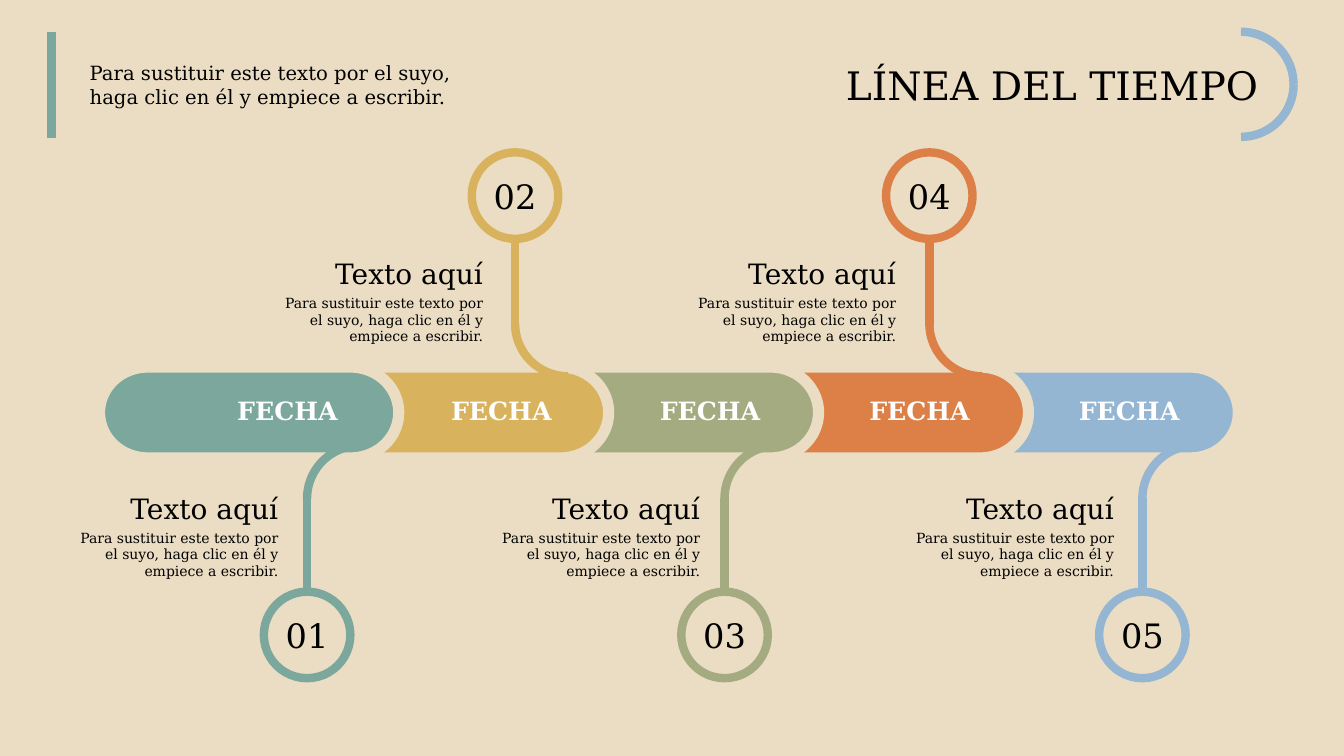
from collections import namedtuple

from lxml import etree
from pptx import Presentation
from pptx.dml.color import RGBColor
from pptx.enum.shapes import MSO_CONNECTOR, MSO_SHAPE
from pptx.enum.text import MSO_AUTO_SIZE, PP_ALIGN
from pptx.oxml.ns import qn
from pptx.util import Cm, Pt

STRAIGHT = MSO_CONNECTOR.STRAIGHT
ARC, OVAL, PILL = MSO_SHAPE.ARC, MSO_SHAPE.OVAL, MSO_SHAPE.FLOWCHART_TERMINATOR
LEFT, CENTER, RIGHT = PP_ALIGN.LEFT, PP_ALIGN.CENTER, PP_ALIGN.RIGHT
GROW = MSO_AUTO_SIZE.SHAPE_TO_FIT_TEXT

SAND = RGBColor(0xEB, 0xDD, 0xC3)
TEAL = RGBColor(0x7B, 0xA7, 0x9D)
GOLD = RGBColor(0xD8, 0xB2, 0x5C)
OLIVE = RGBColor(0xA5, 0xAB, 0x81)
ORANGE = RGBColor(0xDD, 0x80, 0x47)
BLUE = RGBColor(0x94, 0xB6, 0xD2)
BLACK = RGBColor(0, 0, 0)
WHITE = RGBColor(0xFF, 0xFF, 0xFF)

FONT = "DejaVu Serif"
STROKE = 6  # points
ARC_SIZE = 2.65
CIRCLE_SIZE = 2.18
BODY = "Para sustituir este texto por el suyo, haga clic en él y empiece a escribir."

# Heights of the parts of a milestone, above or below the band
Level = namedtuple("Level", "circle stem_from stem_to arc rotation head body")
ABOVE = Level(3.84, 8.22, 5.85, 6.83, 180, 6.35, 7.29)
BELOW = Level(14.91, 12.55, 14.91, 11.23, 270, 12.27, 13.21)

# Stem position, right edge of the text, left edge of the date
Milestone = namedtuple("Milestone", "color level stem text_right date")
MILESTONES = [
    Milestone(TEAL, BELOW, 7.74, 7.26, 4.72),
    Milestone(GOLD, ABOVE, 12.98, 12.42, 10.11),
    Milestone(OLIVE, BELOW, 18.26, 17.89, 15.37),
    Milestone(ORANGE, ABOVE, 23.42, 22.83, 20.65),
    Milestone(BLUE, BELOW, 28.79, 28.32, 25.93),
]


def add_text(s, x, y, w, h, lines, size, align, color=BLACK, bold=False):
    """Add a text box with one paragraph per line."""
    sp = s.shapes.add_textbox(Cm(x), Cm(y), Cm(w), Cm(h))
    tf = sp.text_frame
    tf.word_wrap = True
    tf.auto_size = GROW
    tf.text = "\n".join(lines)
    for p in tf.paragraphs:
        p.alignment = align
        p.font.name = FONT
        p.font.size = Pt(size)
        p.font.bold = bold
        p.font.color.rgb = color
    return tf


def add_outlined(s, kind, x, y, w, h, line, width=STROKE, fill=None):
    """Add a preset shape with an outline and, if given, a fill."""
    sp = s.shapes.add_shape(kind, Cm(x), Cm(y), Cm(w), Cm(h))
    sp.shadow.inherit = False
    if fill is None:
        sp.fill.background()
    else:
        sp.fill.solid()
        sp.fill.fore_color.rgb = fill
    sp.line.color.rgb = line
    sp.line.width = Pt(width)
    return sp


def add_arc(s, x, y, color, rotation):
    """Add a quarter circle; without rotation it is the top right one."""
    sp = add_outlined(s, ARC, x, y, ARC_SIZE, ARC_SIZE, color)
    sp.rotation = rotation


def add_vertical(s, x, y1, y2, color):
    line = s.shapes.add_connector(STRAIGHT, Cm(x), Cm(y1), Cm(x), Cm(y2))
    line.line.color.rgb = color
    line.line.width = Pt(STROKE)
    etree.SubElement(line._element.spPr, qn("a:effectLst"))


def add_header(s):
    tf = add_text(s, 21.08, 1.42, 12.78, 2.62, ["LÍNEA DEL TIEMPO"], 28, RIGHT)
    tf.margin_left, tf.margin_right = 0, Cm(2.16)
    intro = ["Para sustituir este texto por el suyo,",
             "haga clic en él y empiece a escribir."]
    tf = add_text(s, 0, 1.42, 24, 1.45, intro, 14, LEFT)
    tf.margin_left = Cm(2.26)
    add_vertical(s, 1.3, 0.8, 3.48, TEAL)
    for rotation in (0, 90):
        add_arc(s, 29.95, 0.8, BLUE, rotation)


def add_band(s):
    """Add the overlapping pills, the rightmost at the back."""
    for i, m in reversed(list(enumerate(MILESTONES))):
        add_outlined(s, PILL, 2.51 + 5.29 * i, 9.25, 7.54, 2.29, SAND, 8, m.color)


def add_milestone(s, number, m):
    level = m.level
    # Branch and circle
    add_arc(s, m.stem, level.arc, m.color, level.rotation)
    add_vertical(s, m.stem, level.stem_from, level.stem_to, m.color)
    add_outlined(s, OVAL, m.stem - CIRCLE_SIZE / 2, level.circle,
                 CIRCLE_SIZE, CIRCLE_SIZE, m.color, fill=SAND)
    # Texts
    add_text(s, m.stem - 1.03, level.circle + 0.46, 2.06, 1.27,
             [f"{number:02}"], 24, CENTER)
    add_text(s, m.text_right - 5.97, level.head, 5.97, 1.09,
             ["Texto aquí"], 20, RIGHT)
    add_text(s, m.text_right - 5.74, level.body, 5.74, 1.52, [BODY], 10, RIGHT)
    add_text(s, m.date, 9.83, 5.05, 1.02, ["FECHA"], 18, CENTER, WHITE, True)


def main():
    prs = Presentation()
    prs.slide_width, prs.slide_height = Cm(33.87), Cm(19.05)
    s = prs.slides.add_slide(prs.slide_layouts[6])
    s.background.fill.solid()
    s.background.fill.fore_color.rgb = SAND

    add_header(s)
    add_band(s)
    for number, m in enumerate(MILESTONES, 1):
        add_milestone(s, number, m)
    prs.save("out.pptx")


if __name__ == "__main__":
    main()
